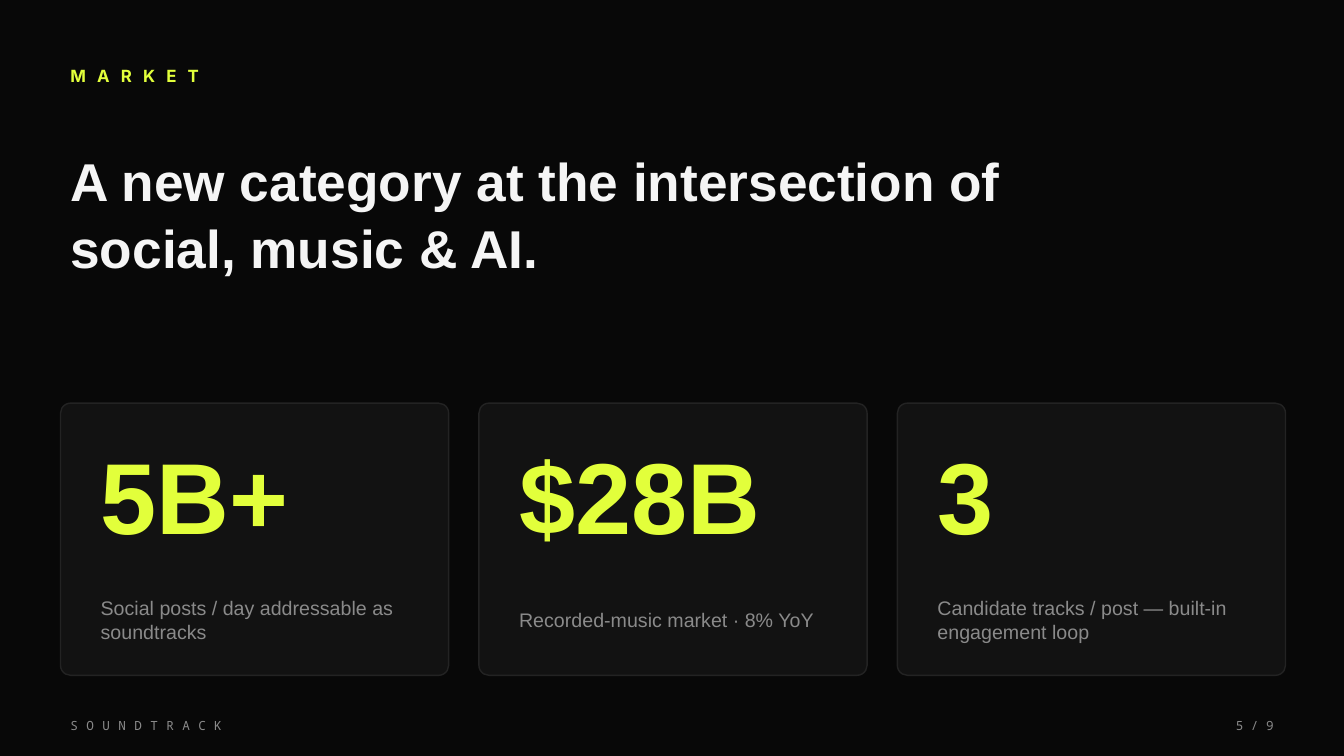
from dataclasses import dataclass

from pptx import Presentation
from pptx import util as u
from pptx.dml.color import RGBColor
from pptx.enum import shapes, text


@dataclass(frozen=True)
class Theme:
    """Colours, fonts and type sizes of the deck."""
    back: str = "080808"
    card: str = "121212"
    edge: str = "232323"
    lime: str = "E2FF3B"
    white: str = "F5F5F5"
    grey: str = "8A8A8A"
    sans: str = "Arial"
    label: str = "Inter"
    mono: str = "Noto Sans Mono"
    tiny: int = 9
    small: int = 12
    body: int = 14
    title: int = 38
    huge: int = 72


T = Theme()
WIDE, HIGH = 13.33, 7.5
LEFT, FULL = 0.6, 12
CARD, STEP = 3.85, 4.15
STATS = [
    ("5B+", "Social posts / day addressable as soundtracks"),
    ("$28B", "Recorded-music market · 8% YoY"),
    ("3", "Candidate tracks / post — built-in engagement loop"),
]


def color(code):
    """Turn a hex code into a colour."""
    return RGBColor.from_string(code)


def write(slide, box, lines, size, ink, face=T.sans, bold=False,
          track=0, lead=None, align=None):
    """Place lines of text, centred vertically in the box."""
    frame = slide.shapes.add_textbox(*map(u.Inches, box)).text_frame
    frame.word_wrap = True
    frame.vertical_anchor = text.MSO_ANCHOR.MIDDLE
    frame.text = "\n".join(lines)
    for para in frame.paragraphs:
        para.line_spacing = lead
        para.alignment = align
        font = para.font
        font.name, font.size, font.bold = face, u.Pt(size), bold
        font.color.rgb = color(ink)
        if track:
            props = para._p.get_or_add_pPr().get_or_add_defRPr()
            props.set("spc", str(track * 100))


def header(slide, left, top, width):
    """Place the section label and the two-line title."""
    write(slide, (left, top, width, 0.4), ["MARKET"], T.small, T.lime,
          T.label, bold=True, track=8)
    title = ["A new category at the intersection of",
             "social, music & AI."]
    write(slide, (left, top + 0.65, width, 1.8), title, T.title, T.white,
          bold=True, lead=1.05)


def card(slide, box, value, note):
    """Draw a rounded card with a large value above its note."""
    left, top, width, _ = box
    panel = slide.shapes.add_shape(
        shapes.MSO_SHAPE.ROUNDED_RECTANGLE, *map(u.Inches, box))
    panel.adjustments[0] = 0.037
    panel.shadow.inherit = False
    panel.fill.solid()
    panel.fill.fore_color.rgb = color(T.card)
    panel.line.color.rgb = color(T.edge)
    panel.line.width = u.Pt(1)
    inner = width - 0.45
    write(slide, (left + 0.3, top + 0.2, inner, 1.4), [value], T.huge,
          T.lime, bold=True)
    write(slide, (left + 0.3, top + 1.7, inner, 0.9), [note], T.body, T.grey)


def footer(slide, left, top, right):
    """Place the deck name and the page count at opposite ends."""
    write(slide, (left, top, 4, 0.3), ["SOUNDTRACK"], T.tiny, T.grey,
          T.mono, track=6)
    write(slide, (right - 1, top, 1, 0.3), ["5 / 9"], T.tiny, T.grey,
          T.mono, align=text.PP_ALIGN.RIGHT)


def main():
    """Build and save the market slide."""
    deck = Presentation()
    deck.slide_width, deck.slide_height = u.Inches(WIDE), u.Inches(HIGH)
    slide = deck.slides.add_slide(deck.slide_layouts[6])
    slide.background.fill.solid()
    slide.background.fill.fore_color.rgb = color(T.back)
    header(slide, LEFT, 0.55, FULL)
    for col, (value, note) in enumerate(STATS):
        card(slide, (LEFT + col * STEP, 4, CARD, 2.7), value, note)
    footer(slide, LEFT, 7.05, WIDE - LEFT)
    deck.save("out.pptx")


if __name__ == "__main__":
    main()
